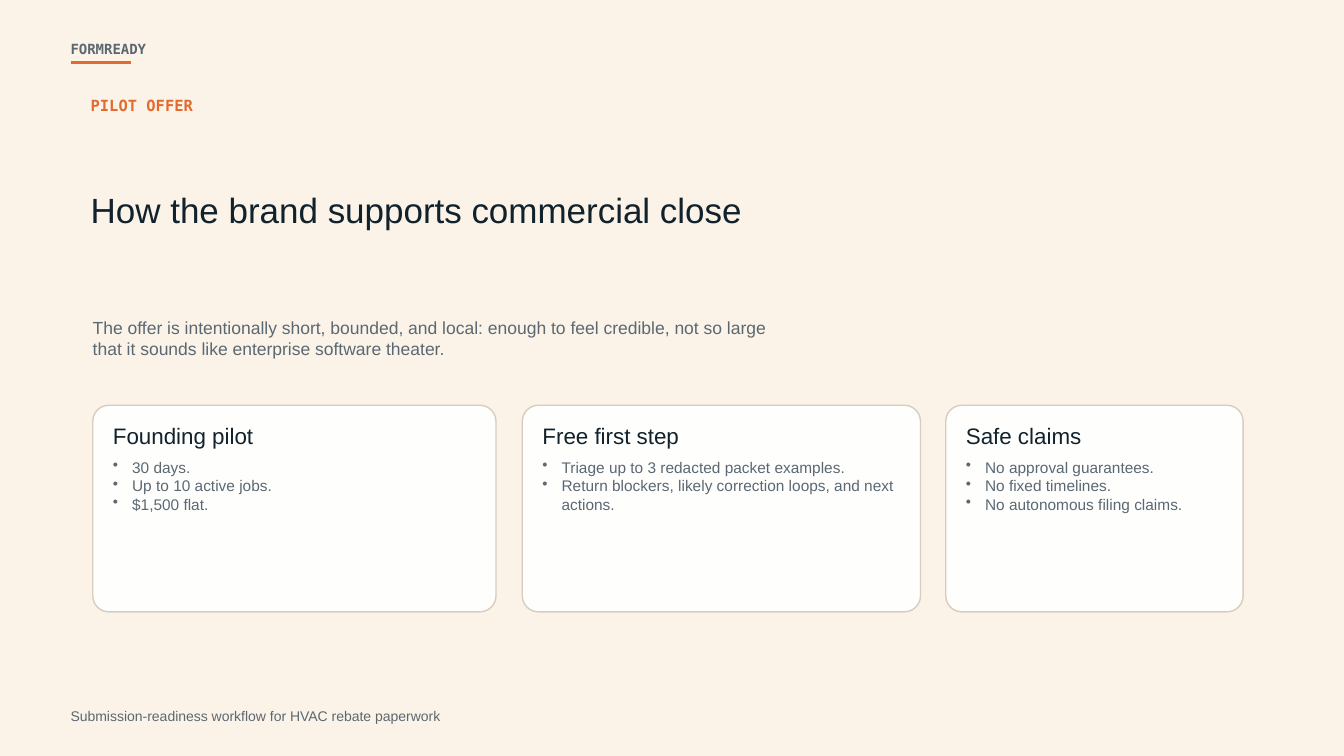
from dataclasses import dataclass

from lxml import etree
from pptx import Presentation
from pptx.dml.color import RGBColor
from pptx.enum.shapes import MSO_CONNECTOR, MSO_SHAPE
from pptx.enum.text import MSO_ANCHOR
from pptx.oxml.ns import qn
from pptx.util import Emu, Pt

RECT, ROUNDED = MSO_SHAPE.RECTANGLE, MSO_SHAPE.ROUNDED_RECTANGLE
STRAIGHT = MSO_CONNECTOR.STRAIGHT
TOP, MIDDLE = MSO_ANCHOR.TOP, MSO_ANCHOR.MIDDLE
EMU_PER_PX = 9144
SLIDE_W, SLIDE_H = 1333, 750
CARD_TOP, CARD_H, CARD_RADIUS, CARD_PAD = 402, 205, 16, 20
BULLET_INDENT = 19

CARDS = [
    (92, 400, "Founding pilot",
     ["30 days.", "Up to 10 active jobs.", "$1,500 flat."]),
    (518, 395, "Free first step",
     ["Triage up to 3 redacted packet examples.",
      "Return blockers, likely correction loops, and next actions."]),
    (938, 295, "Safe claims",
     ["No approval guarantees.", "No fixed timelines.",
      "No autonomous filing claims."]),
]


@dataclass(frozen=True)
class Theme:
    """Colours, fonts and type sizes of the slide."""
    paper: str = "FBF3E8"
    card: str = "FFFFFF"
    border: str = "D7CCBE"
    accent: str = "E36A2F"
    ink: str = "11222C"
    muted: str = "5B6872"
    sans: str = "Arial"
    mono: str = "DejaVu Sans Mono"
    small: float = 10
    body: float = 11
    lead: float = 12.5
    heading: float = 16
    title: float = 25


THEME = Theme()


def px(n):
    """Turn pixels into EMU."""
    return Emu(n * EMU_PER_PX)


def rgb(value):
    """Turn a hex string into a colour."""
    return RGBColor.from_string(value)


def add_bullet(p):
    """Give a paragraph a hanging bullet."""
    pPr = p._p.get_or_add_pPr()
    pPr.set("marL", str(px(BULLET_INDENT)))
    pPr.set("indent", str(-px(BULLET_INDENT)))
    etree.SubElement(pPr, qn("a:buChar")).set("char", "•")


def add_text(s, box, lines, size, color, font=THEME.sans, bold=False,
             anchor=MIDDLE, bullets=False):
    """Add a text box without insets, one paragraph per line."""
    tf = s.shapes.add_textbox(*map(px, box)).text_frame
    tf.word_wrap = True
    tf.vertical_anchor = anchor
    tf.margin_left = tf.margin_right = tf.margin_top = tf.margin_bottom = 0
    for i, line in enumerate(lines):
        p = tf.add_paragraph() if i else tf.paragraphs[0]
        if bullets:
            add_bullet(p)
        r = p.add_run()
        r.text = line
        r.font.name = font
        r.font.size = Pt(size)
        r.font.bold = bold
        r.font.color.rgb = rgb(color)


def add_panel(s, kind, box, fill):
    """Add a filled shape without line or shadow."""
    sp = s.shapes.add_shape(kind, *map(px, box))
    sp.shadow.inherit = False
    sp.fill.solid()
    sp.fill.fore_color.rgb = rgb(fill)
    sp.line.fill.background()
    return sp


def add_rule(s, x1, x2, y, color, width):
    """Add a horizontal line."""
    line = s.shapes.add_connector(STRAIGHT, px(x1), px(y), px(x2), px(y))
    line.line.color.rgb = rgb(color)
    line.line.width = Pt(width)
    etree.SubElement(line._element.spPr, qn("a:effectLst"))


def add_card(s, left, width, heading, points):
    """Add a rounded card with a heading and bullet points."""
    sp = add_panel(s, ROUNDED, (left, CARD_TOP, width, CARD_H), THEME.card)
    sp.adjustments[0] = CARD_RADIUS / min(width, CARD_H)
    sp.line.color.rgb = rgb(THEME.border)
    sp.line.width = Pt(1)
    color = sp._element.spPr.find(qn("a:solidFill"))[0]
    etree.SubElement(color, qn("a:alpha")).set("val", "94000")
    x, w = left + CARD_PAD, width - 2 * CARD_PAD
    add_text(s, (x, CARD_TOP + 16, w, 28), [heading], THEME.heading, THEME.ink)
    add_text(s, (x, CARD_TOP + 52, w - 5, 135), points, THEME.body,
             THEME.muted, anchor=TOP, bullets=True)


def main():
    """Build and save the slide."""
    prs = Presentation()
    prs.slide_width, prs.slide_height = px(SLIDE_W), px(SLIDE_H)
    s = prs.slides.add_slide(prs.slide_layouts[6])
    add_panel(s, RECT, (0, 0, SLIDE_W, SLIDE_H), THEME.paper)
    add_rule(s, 70, 130, 62, THEME.accent, 2.5)
    add_text(s, (70, 36, 220, 25), ["FORMREADY"], THEME.small, THEME.muted,
             THEME.mono, bold=True)
    add_text(s, (70, 700, 480, 20),
             ["Submission-readiness workflow for HVAC rebate paperwork"],
             THEME.small, THEME.muted)
    add_text(s, (90, 95, 400, 20), ["PILOT OFFER"], THEME.body, THEME.accent,
             THEME.mono, bold=True)
    add_text(s, (90, 128, 740, 160),
             ["How the brand supports commercial close"],
             THEME.title, THEME.ink)
    add_text(s, (92, 295, 680, 80),
             ["The offer is intentionally short, bounded, and local: enough "
              "to feel credible, not so large that it sounds like enterprise "
              "software theater."], THEME.lead, THEME.muted)
    for card in CARDS:
        add_card(s, *card)
    prs.save("out.pptx")


if __name__ == "__main__":
    main()
